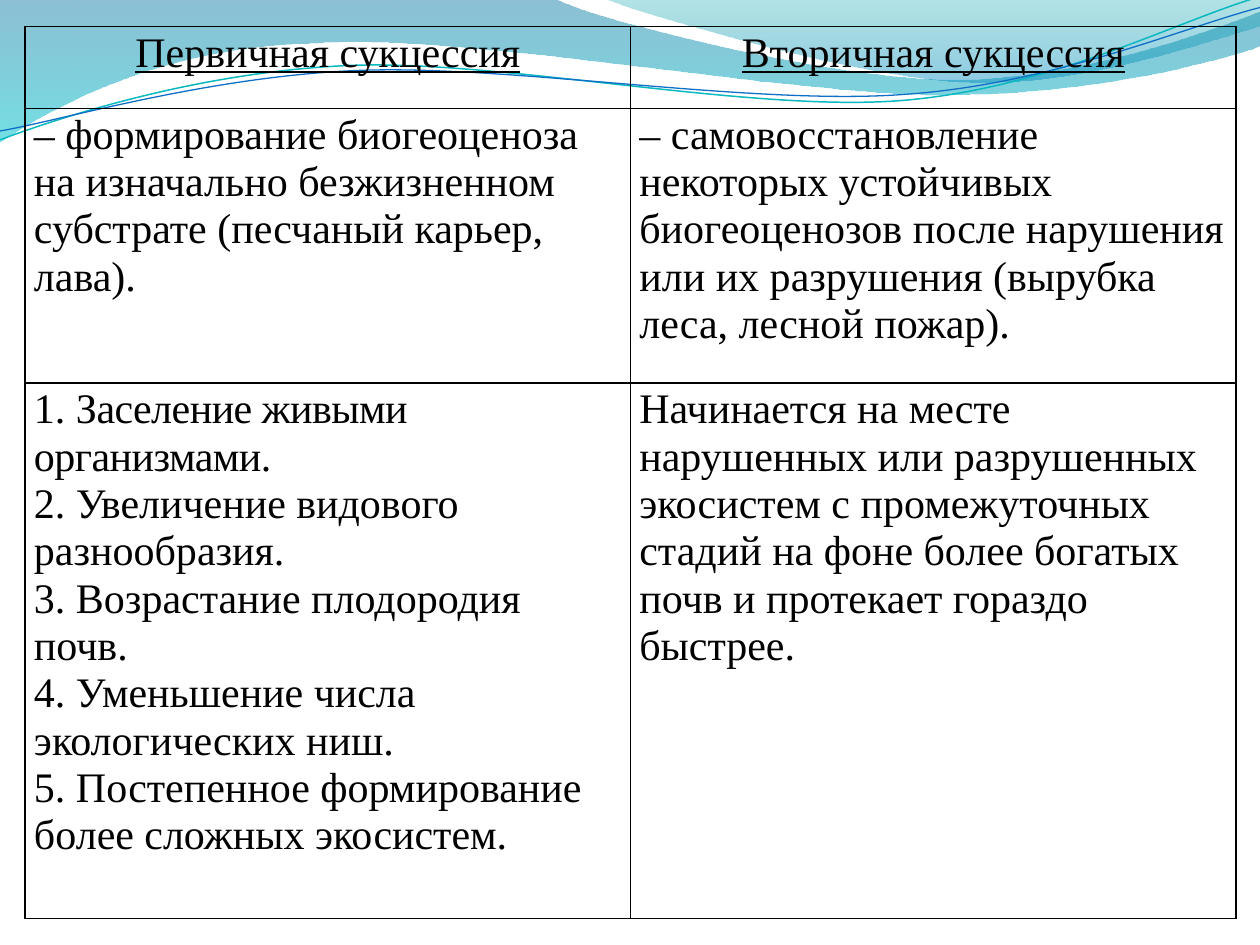
import math

import pptx
import pptx.dml.color
import pptx.enum.text
import pptx.oxml
import pptx.oxml.ns
import pptx.util

RGBColor = pptx.dml.color.RGBColor
BLACK = RGBColor(0x00, 0x00, 0x00)
WHITE = RGBColor(0xFF, 0xFF, 0xFF)
DEEP_BLUE = RGBColor(0x00, 0x74, 0xA1)
CYAN = RGBColor(0x00, 0xC6, 0xCF)
TEAL = RGBColor(0x00, 0xA1, 0xA9)
SKY_BLUE = RGBColor(0x00, 0x8B, 0xBF)
TEAL_LINE = RGBColor(0x0A, 0xB8, 0xBF)
BLUE_LINE = RGBColor(0x0F, 0x6F, 0xC6)

COLUMNS, ROWS = 10, 7.5  # slide grid
STRAND_TILT = 357.3

HEADINGS = ["Первичная сукцессия", "Вторичная сукцессия"]
DEFINITIONS = [
    "– формирование биогеоценоза на изначально безжизненном субстрате "
    "(песчаный карьер, лава).",
    "– самовосстановление некоторых устойчивых биогеоценозов после нарушения "
    "или их разрушения (вырубка леса, лесной пожар).",
]
STAGES = [
    "Заселение живыми организмами.",
    "Увеличение видового разнообразия.",
    "Возрастание плодородия почв.",
    "Уменьшение числа экологических ниш.",
    "Постепенное формирование более сложных экосистем.",
]
SECONDARY_COURSE = (
    "Начинается на месте нарушенных или разрушенных экосистем "
    "с промежуточных стадий на фоне более богатых почв и протекает "
    "гораздо быстрее."
)

# Outlines in grid units: each step is one point, or three for a Bezier curve
LARGE_WAVE = [
    [(0, 0)], [(4.4, -0.01)],
    [(4.76, 0.17), (6.64, 0.63), (7.58, 0.63)],
    [(8.53, 0.63), (9.58, 0.26), (10, 0.09)],
    [(10.01, 0.36)],
    [(9.83, 0.44), (8.7, 0.76), (7.46, 0.75)],
    [(6.22, 0.75), (3.82, 0.28), (2.57, 0.34)],
    [(1.29, 0.36), (0.46, 0.83), (-0.01, 1.13)],
]
SMALL_WAVE = [
    [(4.79, -0.01)],
    [(5.09, 0.11), (6.82, 0.62), (7.69, 0.65)],
    [(8.56, 0.69), (9.61, 0.32), (10, 0.21)],
    [(10, 0)],
]
TEAL_STRAND = [
    [(0, 1.11)],
    [(0.48, 0.93), (1.58, 0.57), (2.77, 0.52)],
    [(3.95, 0.47), (5.93, 0.89), (7.13, 0.8)],
    [(8.33, 0.71), (9.38, 0.15), (9.98, -0.02)],
]
BLUE_STRAND = [
    [(0, 1.04)],
    [(0.47, 0.96), (1.64, 0.61), (2.83, 0.56)],
    [(4.03, 0.51), (5.97, 0.84), (7.17, 0.75)],
    [(8.36, 0.67), (9.41, 0.21), (10, 0.06)],
]


def add_text(paragraph, text, size=24, font="Times New Roman", color=BLACK,
             underline=False, spacing=0):
    """Add a formatted run; spacing is in points between letters."""
    run = paragraph.add_run()
    run.text = text
    run.font.size = pptx.util.Pt(size)
    run.font.name = font
    run.font.color.rgb = color
    run.font.underline = underline
    if spacing:
        run.font._element.set("spc", str(round(spacing * 100)))


def turn(outline, center, degrees):
    """Rotate an outline clockwise about its center."""
    cosine, sine = math.cos(math.radians(degrees)), math.sin(math.radians(degrees))
    center_x, center_y = center
    return [[(center_x + (x - center_x) * cosine - (y - center_y) * sine,
              center_y + (x - center_x) * sine + (y - center_y) * cosine)
             for x, y in step] for step in outline]


class SlideBuilder:
    line_spacing = 1.02
    border_width = 1

    def __init__(self, presentation):
        self.column = presentation.slide_width / COLUMNS
        self.row = presentation.slide_height / ROWS
        self.slide = presentation.slides.add_slide(presentation.slide_layouts[6])
        self.slide.background.fill.solid()
        self.slide.background.fill.fore_color.rgb = WHITE

    def x(self, columns):
        return round(columns * self.column)

    def y(self, rows):
        return round(rows * self.row)

    def outline(self, outline, close):
        """Draw the anchor points, then bend the curved steps."""
        anchors = [(self.x(step[-1][0]), self.y(step[-1][1])) for step in outline]
        builder = self.slide.shapes.build_freeform(*anchors[0])
        builder.add_line_segments(anchors[1:], close=close)
        shape = builder.convert_to_shape()
        shape.shadow.inherit = False
        segments = list(shape.element.iter(pptx.oxml.ns.qn("a:lnTo")))
        for segment, step in zip(segments, outline[1:]):
            if len(step) == 3:
                points = "".join(
                    f'<a:pt x="{self.x(x) - shape.left}" y="{self.y(y) - shape.top}"/>'
                    for x, y in step)
                curve = pptx.oxml.parse_xml(
                    f'<a:cubicBezTo {pptx.oxml.ns.nsdecls("a")}>{points}</a:cubicBezTo>')
                segment.getparent().replace(segment, curve)
        return shape

    def wave(self, outline, stops):
        """Filled band; each stop is a colour and its opacity in percent."""
        shape = self.outline(outline, True)
        shape.line.fill.background()
        shape.fill.gradient()
        shape.fill.gradient_angle = 270
        for position, (stop, (color, _)) in enumerate(
                zip(shape.fill.gradient_stops, stops)):
            stop.position = position
            stop.color.rgb = color
        elements = shape.element.spPr.iter(pptx.oxml.ns.qn("a:srgbClr"))
        for element, (_, opacity) in zip(elements, stops):
            element.append(element.makeelement(
                pptx.oxml.ns.qn("a:alpha"), {"val": str(opacity * 1000)}))

    def strand(self, outline, center, color, width):
        """Thin curve in a tilted frame."""
        shape = self.outline(turn(outline, center, -STRAND_TILT), False)
        shape.rotation = STRAND_TILT
        shape.fill.background()
        shape.line.color.rgb = color
        shape.line.width = pptx.util.Pt(width)

    def table(self, left, top, width, row_heights):
        frame = self.slide.shapes.add_table(
            len(row_heights), 2, self.x(left), self.y(top),
            self.x(width), self.y(sum(row_heights)))
        table = frame.table
        table.first_row = table.horz_banding = False
        for row, height in zip(table.rows, row_heights):
            row.height = self.y(height)
        for cell in table.iter_cells():
            cell.margin_left = cell.margin_right = self.x(0.07)
            cell.margin_top = cell.margin_bottom = self.y(0.02)
            self.borders(cell)
            cell.fill.background()
        return table

    def borders(self, cell):
        properties = cell._tc.get_or_add_tcPr()
        width = pptx.util.Pt(self.border_width)
        for side in ("lnL", "lnR", "lnT", "lnB"):
            properties.append(pptx.oxml.parse_xml(
                f'<a:{side} {pptx.oxml.ns.nsdecls("a")} w="{width}">'
                f'<a:solidFill><a:srgbClr val="{BLACK}"/></a:solidFill></a:{side}>'))

    def cell_text(self, cell, paragraphs, align=pptx.enum.text.PP_ALIGN.LEFT):
        """Each paragraph is a list of (text, format) runs."""
        frame = cell.text_frame
        for index, runs in enumerate(paragraphs):
            paragraph = frame.add_paragraph() if index else frame.paragraphs[0]
            paragraph.alignment = align
            paragraph.line_spacing = self.line_spacing
            for text, style in runs:
                add_text(paragraph, text, **style)


def main():
    presentation = pptx.Presentation()
    presentation.slide_width = pptx.util.Inches(10)
    presentation.slide_height = pptx.util.Inches(7.5)
    builder = SlideBuilder(presentation)
    # Waves along the top edge
    builder.wave(LARGE_WAVE, [(DEEP_BLUE, 45), (CYAN, 55)])
    builder.wave(SMALL_WAVE, [(TEAL, 30), (SKY_BLUE, 45)])
    builder.strand(TEAL_STRAND, (4.99, 0.58), TEAL_LINE, 0.85)
    builder.strand(BLUE_STRAND, (5, 0.59), BLUE_LINE, 0.75)
    # Comparison table: headings, definitions, course of succession
    table = builder.table(0.2, 0.21, 9.61, [0.65, 2.18, 4.25])
    for column, (heading, definition) in enumerate(zip(HEADINGS, DEFINITIONS)):
        builder.cell_text(table.cell(0, column), [[(heading, {"underline": True})]],
                          align=pptx.enum.text.PP_ALIGN.CENTER)
        builder.cell_text(table.cell(1, column), [[(definition, {})]])
    first_stage = [("1. ", {}), (STAGES[0], {"spacing": -0.3})]
    later_stages = [[(f"{number}. {stage}", {})]
                    for number, stage in enumerate(STAGES[1:], start=2)]
    builder.cell_text(table.cell(2, 0), [first_stage, *later_stages])
    builder.cell_text(table.cell(2, 1), [[(SECONDARY_COURSE, {})]])
    presentation.save("out.pptx")


if __name__ == "__main__":
    main()
